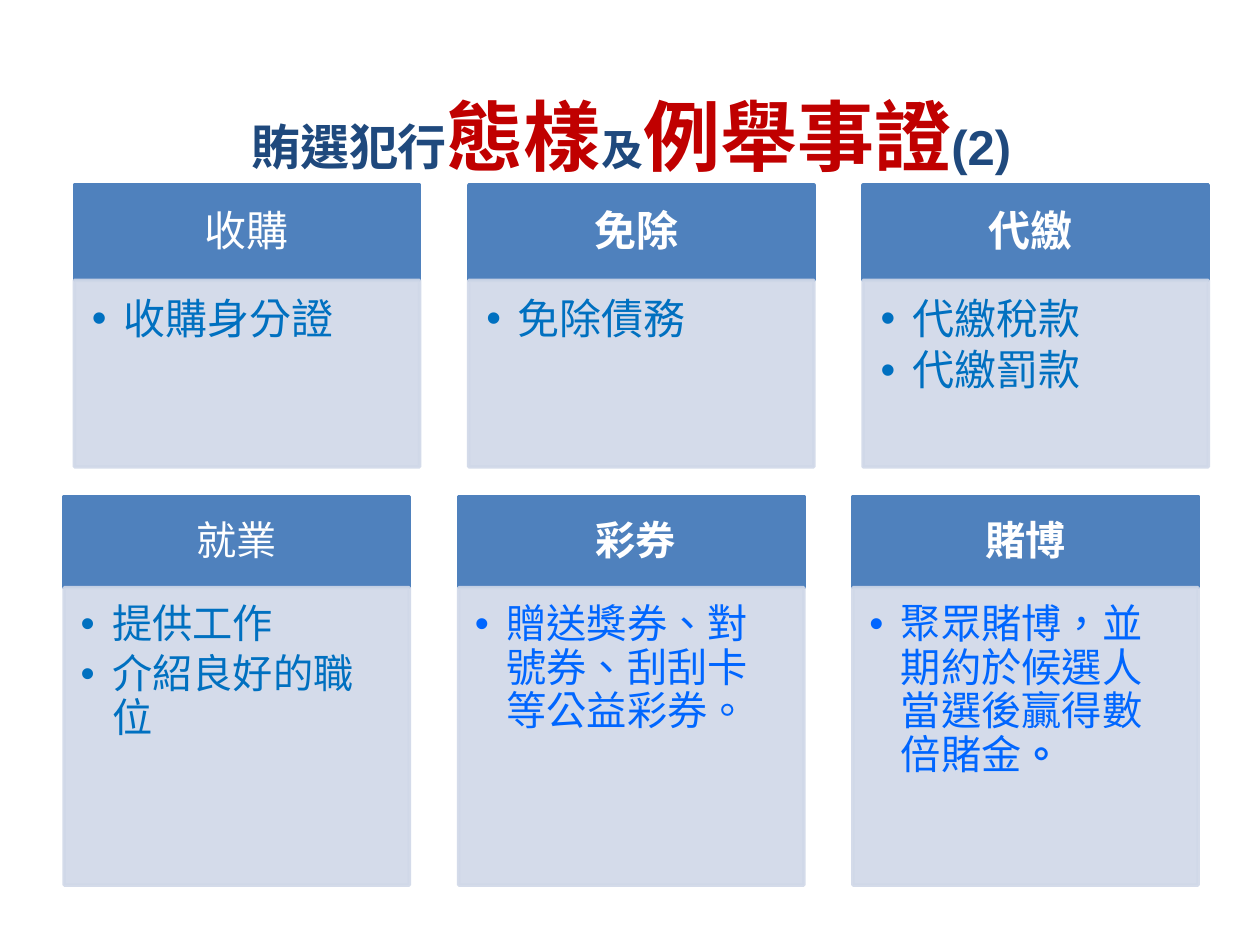
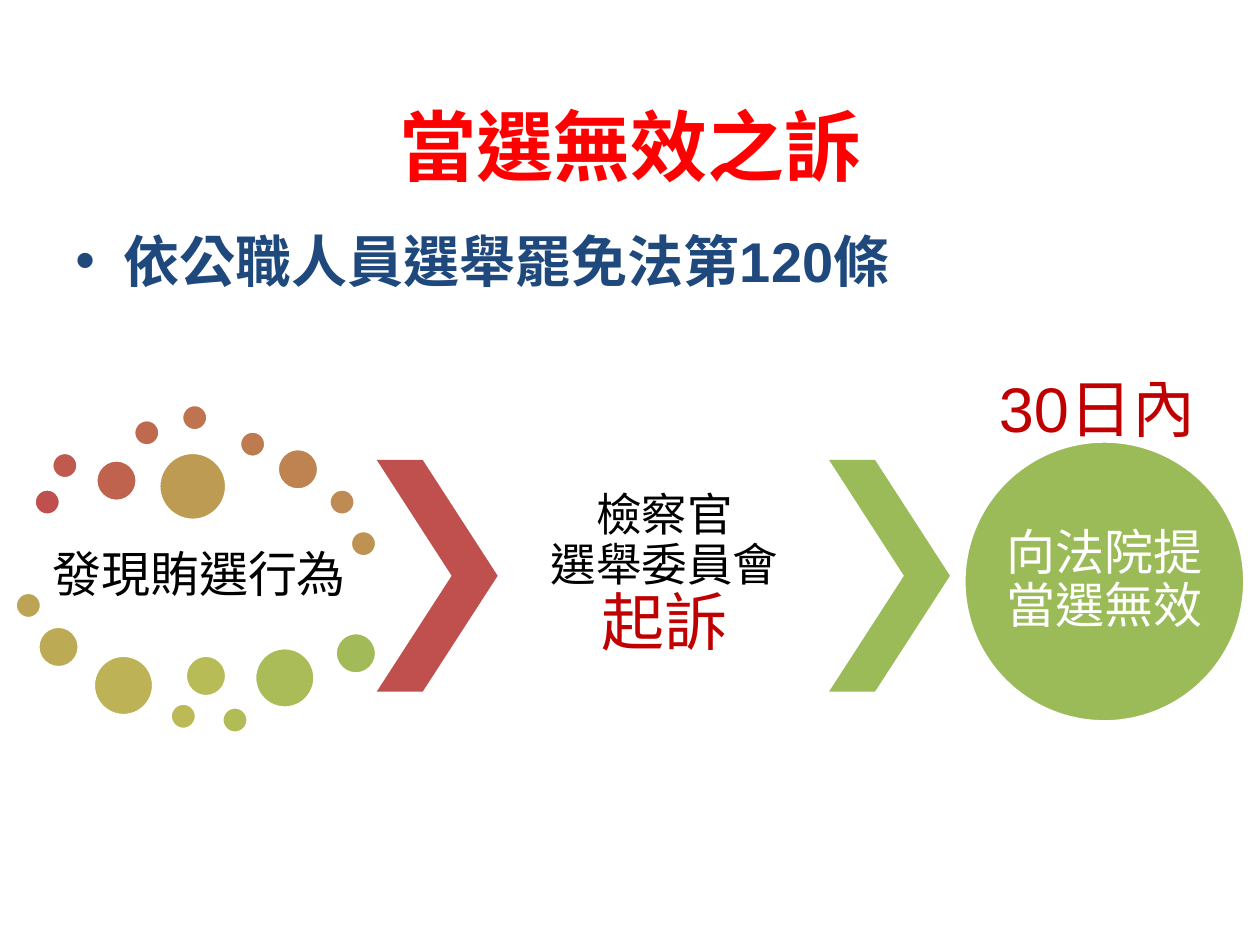
import colorsys
from dataclasses import dataclass
from typing import NamedTuple, Optional

from lxml import etree
from pptx import Presentation
from pptx.dml.color import RGBColor
from pptx.enum.shapes import MSO_SHAPE
from pptx.enum.text import MSO_ANCHOR, PP_ALIGN
from pptx.oxml.ns import qn
from pptx.util import Inches, Pt

RECTANGLE, OVAL, CHEVRON = MSO_SHAPE.RECTANGLE, MSO_SHAPE.OVAL, MSO_SHAPE.CHEVRON
TOP, MIDDLE = MSO_ANCHOR.TOP, MSO_ANCHOR.MIDDLE
LEFT, CENTER = PP_ALIGN.LEFT, PP_ALIGN.CENTER

# Slide grid: 100 columns by 75 rows
SLIDE_WIDTH, SLIDE_HEIGHT = Inches(10), Inches(7.5)
COLUMN, ROW = SLIDE_WIDTH / 100, SLIDE_HEIGHT / 75

# Colours and fonts
WHITE = RGBColor(0xFF, 0xFF, 0xFF)
BLACK = RGBColor(0x00, 0x00, 0x00)
NAVY = RGBColor(0x1F, 0x49, 0x7D)
DARK_RED = RGBColor(0xC0, 0x00, 0x00)
BRIGHT_RED = RGBColor(0xFF, 0x00, 0x00)
HEADER_BLUE = RGBColor(0x4F, 0x81, 0xBD)
PANEL_BLUE = RGBColor(0xD0, 0xD8, 0xE8)
TEXT_BLUE = RGBColor(0x00, 0x70, 0xC0)
VIVID_BLUE = RGBColor(0x00, 0x66, 0xFF)
BRICK = RGBColor(0xC0, 0x50, 0x4D)
GREEN = RGBColor(0x9B, 0xBB, 0x59)
ARIAL, NOTO = "Arial", "Noto Sans CJK SC"
LINE_WIDTH = Pt(2)
TIGHT = 0.9


class Area(NamedTuple):
    """A place on the slide, in grid columns and rows."""
    left: float
    top: float
    width: float
    height: float


class Piece(NamedTuple):
    """Text with its own format; a line feed is a line break."""
    text: str
    size: float
    color: RGBColor
    bold: bool = False
    font: str = ARIAL


@dataclass
class Card:
    header: Piece
    bullets: list[list[Piece]]


@dataclass
class CardRow:
    left: float
    top: float
    header_height: float
    body_height: float
    header_insets: tuple[float, ...]
    body_insets: tuple[float, ...]
    cards: list[Card]


class Dot(NamedTuple):
    left: float
    top: float
    diameter: float


CARD_WIDTH, CARD_PITCH = 27.4, 31.3
TITLE_LEFT, TITLE_WIDTH, TITLE_HEIGHT = 5.1, 90, 12.5


def place(area: Area) -> tuple[int, int, int, int]:
    return (round(area.left * COLUMN), round(area.top * ROW),
            round(area.width * COLUMN), round(area.height * ROW))


def add_bullet(paragraph, indent: float) -> None:
    properties = paragraph._p.get_or_add_pPr()
    properties.set("marL", str(round(indent * COLUMN)))
    properties.set("indent", str(-round(indent * COLUMN)))
    etree.SubElement(properties, qn("a:buFont")).set("typeface", ARIAL)
    etree.SubElement(properties, qn("a:buChar")).set("char", "•")


def add_piece(paragraph, piece: Piece) -> None:
    for index, line in enumerate(piece.text.split("\n")):
        if index:
            paragraph.add_line_break()
        if not line:
            continue
        run = paragraph.add_run()
        run.text = line
        run.font.name, run.font.size = piece.font, Pt(piece.size)
        run.font.bold = piece.bold
        run.font.color.rgb = piece.color
        run._r.get_or_add_rPr().set("lang", "zh-TW")


def write(shape, paragraphs: list[list[Piece]], *, align=CENTER, anchor=MIDDLE,
          insets: tuple[float, ...] = (1, 0.5, 1, 0.5),
          line_spacing: Optional[float] = None, space_after: float = 0,
          bullet_indent: float = 0) -> None:
    """Fill a shape with paragraphs; insets run left, top, right, bottom."""
    frame = shape.text_frame
    frame.word_wrap = True
    frame.vertical_anchor = anchor
    left, top, right, bottom = insets
    frame.margin_left, frame.margin_right = round(left * COLUMN), round(right * COLUMN)
    frame.margin_top, frame.margin_bottom = round(top * ROW), round(bottom * ROW)
    for index, pieces in enumerate(paragraphs):
        paragraph = frame.add_paragraph() if index else frame.paragraphs[0]
        paragraph.alignment = align
        if line_spacing:
            paragraph.line_spacing = line_spacing
        if space_after:
            paragraph.space_after = Pt(space_after)
        if bullet_indent:
            add_bullet(paragraph, bullet_indent)
        for piece in pieces:
            add_piece(paragraph, piece)


def add_text(slide, area: Area, paragraphs: list[list[Piece]], **text_format) -> None:
    write(slide.shapes.add_textbox(*place(area)), paragraphs, **text_format)


def add_figure(slide, kind, area: Area, fill: RGBColor,
               line: Optional[RGBColor] = None, opacity: int = 100):
    shape = slide.shapes.add_shape(kind, *place(area))
    shape.shadow.inherit = False
    shape.fill.solid()
    shape.fill.fore_color.rgb = fill
    if line is None:
        shape.line.fill.background()
    else:
        shape.line.color.rgb = line
        shape.line.width = LINE_WIDTH
    if opacity < 100:
        for color in shape._element.spPr.iter(qn("a:srgbClr")):
            etree.SubElement(color, qn("a:alpha")).set("val", str(opacity * 1000))
    return shape


def add_title(slide, top: float, pieces: list[Piece]) -> None:
    add_text(slide, Area(TITLE_LEFT, top, TITLE_WIDTH, TITLE_HEIGHT), [pieces])


def add_card_row(slide, row: CardRow) -> None:
    for index, card in enumerate(row.cards):
        left = row.left + index * CARD_PITCH
        header = add_figure(slide, RECTANGLE,
                            Area(left, row.top, CARD_WIDTH, row.header_height),
                            HEADER_BLUE, HEADER_BLUE)
        write(header, [[card.header]], insets=row.header_insets, line_spacing=TIGHT)
        body = add_figure(slide, RECTANGLE,
                          Area(left, row.top + row.header_height, CARD_WIDTH, row.body_height),
                          PANEL_BLUE, PANEL_BLUE, opacity=90)
        write(body, card.bullets, align=LEFT, anchor=TOP, insets=row.body_insets,
              line_spacing=TIGHT, space_after=3.6, bullet_indent=2.5)


def blend(start: RGBColor, end: RGBColor, share: float) -> RGBColor:
    """Colour part of the way round the wheel from start to end."""
    first, last = (colorsys.rgb_to_hls(*(channel / 255 for channel in color))
                   for color in (start, end))
    mixed = (a + (b - a) * share for a, b in zip(first, last))
    return RGBColor(*(round(channel * 255) for channel in colorsys.hls_to_rgb(*mixed)))


# Slide 1: cards of bribery types
UPPER_ROW = CardRow(5.9, 14.7, 7.55, 14.8, (1.9, 1.1, 1.9, 1.1), (1.4, 1.4, 1.9, 2.1), [
    Card(Piece("收購", 24, WHITE), [[Piece("收購身分證", 24, TEXT_BLUE)]]),
    Card(Piece("免除 ", 24, WHITE, True), [[Piece("免除債務", 24, TEXT_BLUE)]]),
    Card(Piece("代繳 ", 24, WHITE, True),
         [[Piece("代繳稅款", 24, TEXT_BLUE)], [Piece("代繳罰款", 24, TEXT_BLUE)]]),
])
LOWER_ROW = CardRow(5.1, 39.4, 7.25, 23.6, (1.8, 1, 1.8, 1), (1.3, 1.3, 1.8, 2), [
    Card(Piece("就業", 23, WHITE),
         [[Piece("提供工作", 23, TEXT_BLUE)], [Piece("介紹良好的職位", 23, TEXT_BLUE)]]),
    Card(Piece(" 彩券", 23, WHITE, True),
         [[Piece("贈送獎券、對號券、刮刮卡等公益彩券。", 23, VIVID_BLUE, font=NOTO)]]),
    Card(Piece("賭博", 23, WHITE, True, NOTO),
         [[Piece("聚眾賭博，並期約於候選人當選後贏得數倍賭金", 23, VIVID_BLUE, font=NOTO),
           Piece("。", 23, VIVID_BLUE, True, NOTO)]]),
])


def build_types_slide(slide) -> None:
    add_title(slide, 4.4, [
        Piece("賄選犯行", 28, NAVY, True), Piece("態樣", 44, DARK_RED, True),
        Piece("及", 24, NAVY, True), Piece("例舉事證", 44, DARK_RED, True),
        Piece("(2)", 28, NAVY, True)])
    for row in (UPPER_ROW, LOWER_ROW):
        add_card_row(slide, row)


# Slide 2: steps of the lawsuit
SMALL, MEDIUM, LARGE, LARGEST = 2.1, 3.3, 4.8, 5.4
DOTS = [
    Dot(2.7, 38.8, SMALL), Dot(4.1, 35.9, SMALL), Dot(7.6, 36.5, MEDIUM),
    Dot(10.6, 33.3, SMALL), Dot(14.4, 32.1, SMALL), Dot(19, 34.2, SMALL),
    Dot(22, 35.6, MEDIUM), Dot(26.1, 38.8, SMALL), Dot(27.8, 42.1, SMALL),
    Dot(12.6, 35.9, LARGEST), Dot(1.2, 47, SMALL), Dot(3, 49.7, MEDIUM),
    Dot(7.4, 52, LARGE), Dot(13.5, 55.8, SMALL), Dot(14.7, 52, MEDIUM),
    Dot(17.6, 56.1, SMALL), Dot(20.2, 51.4, LARGE), Dot(26.6, 50.2, MEDIUM),
]
STEP_TOP, STEP_HEIGHT = 36.5, 18.4
STEP_INSETS = (0.4, 0.4, 0.4, 0.4)


def build_lawsuit_slide(slide) -> None:
    add_title(slide, 5.2, [Piece("當選無效之訴", 44, BRIGHT_RED, True)])
    add_text(slide, Area(5, 17.5, 90, 49.5),
             [[Piece("依公職人員選舉罷免法第120條", 32, NAVY, True)]],
             align=LEFT, anchor=TOP, bullet_indent=3.8)

    # Discovery, ringed by dots
    add_text(slide, Area(2.7, 41.5, 26.2, 8.6), [[Piece("發現賄選行為", 28, BLACK)]],
             insets=STEP_INSETS, line_spacing=TIGHT)
    for index, dot in enumerate(DOTS):
        add_figure(slide, OVAL, Area(dot.left, dot.top, dot.diameter, dot.diameter),
                   blend(BRICK, GREEN, index / len(DOTS)), WHITE)

    # Chevrons between the steps
    for left, color in ((29.9, BRICK), (65.8, GREEN)):
        chevron = add_figure(slide, CHEVRON, Area(left, STEP_TOP, 9.6, STEP_HEIGHT), color)
        chevron.adjustments[0] = 0.62

    # Prosecution
    add_text(slide, Area(39.6, STEP_TOP, 26.3, STEP_HEIGHT),
             [[Piece("檢察官\n選舉委員會\n", 26, BLACK), Piece("起訴", 36, DARK_RED)]],
             insets=STEP_INSETS, line_spacing=TIGHT)

    # Court and deadline
    court = add_figure(slide, OVAL, Area(76.5, 35, 22.3, 22.3), GREEN, WHITE)
    write(court, [[Piece("向法院提\n當選無效", 28, WHITE)]],
          insets=(0, 0, 0, 0), line_spacing=TIGHT)
    add_text(slide, Area(78.3, 28.8, 18.9, 7.1), [[Piece("30日內", 36, DARK_RED)]],
             align=LEFT, anchor=TOP)


def main() -> None:
    presentation = Presentation()
    presentation.slide_width, presentation.slide_height = SLIDE_WIDTH, SLIDE_HEIGHT
    blank_layout = presentation.slide_layouts[6]
    for build in (build_types_slide, build_lawsuit_slide):
        build(presentation.slides.add_slide(blank_layout))
    presentation.save("out.pptx")


if __name__ == "__main__":
    main()
